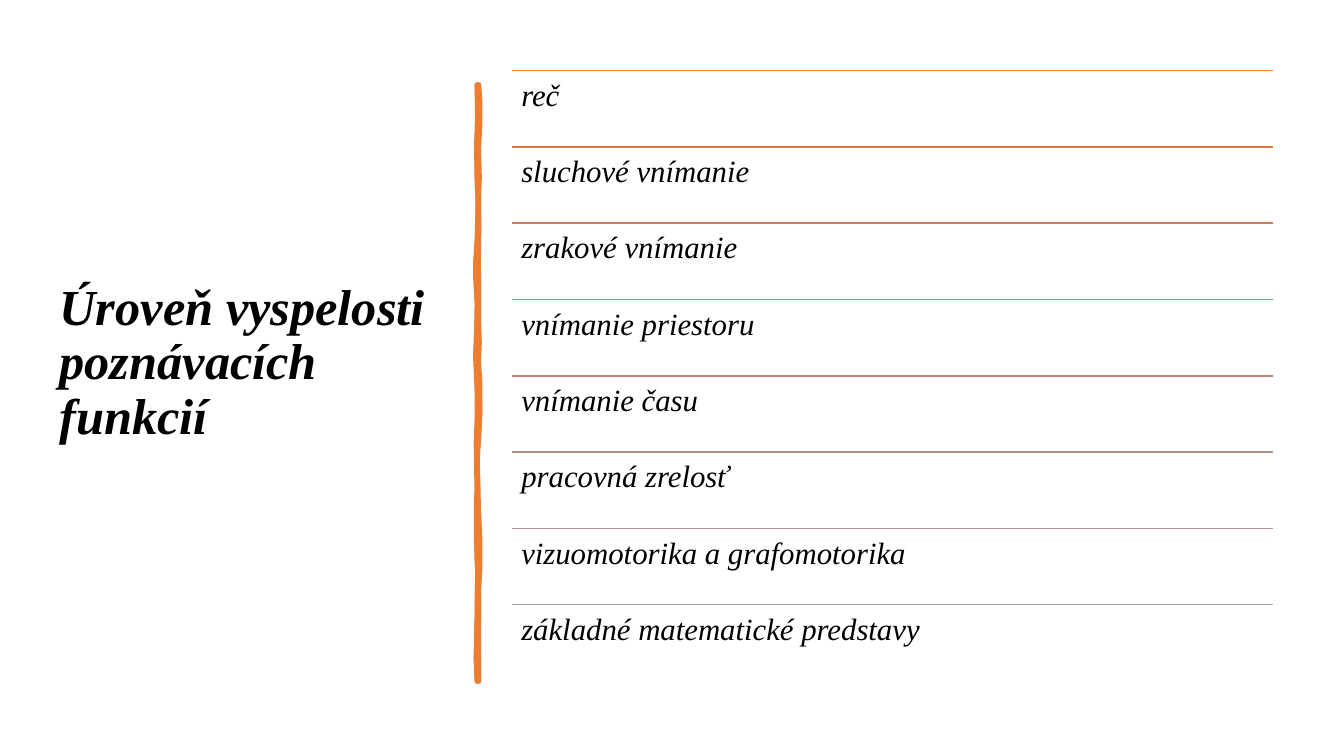
from lxml.etree import SubElement
from pptx import Presentation
from pptx.dml.color import RGBColor
from pptx.enum.shapes import MSO_CONNECTOR
from pptx.enum.text import MSO_ANCHOR, MSO_AUTO_SIZE, PP_ALIGN
from pptx.oxml.ns import qn
from pptx.util import Inches, Pt

TOPICS = [
    ("reč", "ED7D31"),
    ("sluchové vnímanie", "E07A44"),
    ("zrakové vnímanie", "D57B56"),
    ("vnímanie priestoru", "CA7E67"),
    ("vnímanie času", "BF8478"),
    ("pracovná zrelosť", "B68D88"),
    ("vizuomotorika a grafomotorika", "AD9897"),
    ("základné matematické predstavy", "A5A5A5"),
]
LIST_LEFT, LIST_TOP, LIST_WIDTH, LAST_TOP = 5.08, 0.7, 7.55, 6
ROW_HEIGHT = (LAST_TOP - LIST_TOP) / (len(TOPICS) - 1)

BRUSH_START = (4.75, 0.84)
BRUSH_STROKES = [
    [
        (4.77, 1.02, 4.77, 1.19, 4.75, 1.46), (4.73, 1.73, 4.76, 1.95, 4.75, 2.26),
        (4.74, 2.57, 4.75, 2.62, 4.75, 2.94), (4.74, 3.25, 4.77, 3.42, 4.75, 3.56),
        (4.73, 3.7, 4.79, 4.14, 4.75, 4.36), (4.71, 4.57, 4.72, 4.84, 4.75, 5.1),
        (4.77, 5.36, 4.77, 5.64, 4.75, 5.84), (4.73, 6.03, 4.76, 6.5, 4.75, 6.76),
        (4.74, 6.76, 4.73, 6.76, 4.73, 6.76), (4.74, 6.46, 4.71, 6.44, 4.73, 6.13),
        (4.74, 5.83, 4.74, 5.7, 4.73, 5.57), (4.72, 5.44, 4.72, 4.95, 4.73, 4.77),
        (4.73, 4.59, 4.71, 4.45, 4.73, 4.15), (4.74, 3.86, 4.72, 3.73, 4.73, 3.35),
        (4.74, 2.98, 4.72, 2.81, 4.73, 2.5), (4.74, 2.18, 4.75, 2, 4.73, 1.81),
        (4.7, 1.63, 4.77, 1.04, 4.73, 0.84),
    ],
    [
        (4.75, 1.15, 4.72, 1.25, 4.75, 1.52), (4.77, 1.79, 4.74, 1.97, 4.75, 2.08),
        (4.76, 2.2, 4.74, 2.55, 4.75, 2.94), (4.76, 3.33, 4.73, 3.43, 4.75, 3.62),
        (4.77, 3.81, 4.77, 3.97, 4.75, 4.3), (4.72, 4.63, 4.75, 4.74, 4.75, 5.16),
        (4.75, 5.57, 4.74, 5.53, 4.75, 5.78), (4.76, 6.03, 4.74, 6.47, 4.75, 6.76),
        (4.74, 6.75, 4.73, 6.75, 4.73, 6.76), (4.7, 6.49, 4.74, 6.32, 4.73, 6.13),
        (4.72, 5.95, 4.75, 5.69, 4.73, 5.39), (4.71, 5.1, 4.76, 5, 4.73, 4.71),
        (4.7, 4.42, 4.77, 4.2, 4.73, 3.86), (4.69, 3.51, 4.74, 3.25, 4.73, 3),
        (4.71, 2.75, 4.71, 2.59, 4.73, 2.38), (4.74, 2.16, 4.74, 1.85, 4.73, 1.64),
        (4.71, 1.43, 4.75, 1.21, 4.73, 0.84),
    ],
]


def color(hex_value):
    return RGBColor.from_string(hex_value)


def apply(target, formats):
    for name, value in formats.items():
        setattr(target, name, value)


def write(frame, text, size, bold, frame_formats):
    apply(frame, {"word_wrap": True, "auto_size": MSO_AUTO_SIZE.NONE, **frame_formats})
    paragraph = frame.paragraphs[0]
    apply(paragraph, {"alignment": PP_ALIGN.LEFT, "line_spacing": 0.9})
    run = paragraph.add_run()
    run.text = text
    apply(run.font, {"name": "Times New Roman", "size": Pt(size), "bold": bold, "italic": True})
    run.font.color.rgb = color("000000")


def add_heading(slide, text):
    heading = slide.shapes.title
    apply(heading, {"left": Inches(0.49), "top": Inches(0.33),
                    "width": Inches(3.9), "height": Inches(6.55)})
    write(heading.text_frame, text, 36, True, {"vertical_anchor": MSO_ANCHOR.MIDDLE})


def curve_points(start, curves, steps=3):
    points = [start]
    for x1, y1, x2, y2, x3, y3 in curves:
        x0, y0 = points[-1]
        for step in range(1, steps + 1):
            t = step / steps
            u = 1 - t
            weights = (u ** 3, 3 * u * u * t, 3 * u * t * t, t ** 3)
            points.append((sum(w * x for w, x in zip(weights, (x0, x1, x2, x3))),
                           sum(w * y for w, y in zip(weights, (y0, y1, y2, y3)))))
    return points


def add_brush_line(slide, accent):
    outlines = [[(Inches(x), Inches(y)) for x, y in curve_points(BRUSH_START, curves)]
                for curves in BRUSH_STROKES]
    builder = slide.shapes.build_freeform(*outlines[0][0])
    builder.add_line_segments(outlines[0][1:], close=True)
    for outline in outlines[1:]:
        builder.move_to(*outline[0])
        builder.add_line_segments(outline[1:], close=True)
    brush = builder.convert_to_shape()
    brush.shadow.inherit = False
    brush.fill.solid()
    brush.fill.fore_color.rgb = color(accent)
    brush.line.color.rgb = color(accent)
    brush.line.width = Pt(3.25)
    SubElement(brush._element.spPr.find(qn("a:ln")), qn("a:round"))


def add_rule(slide, top, accent):
    rule = slide.shapes.add_connector(
        MSO_CONNECTOR.STRAIGHT, Inches(LIST_LEFT), Inches(top),
        Inches(LIST_LEFT + LIST_WIDTH), Inches(top))
    rule.line.color.rgb = color(accent)
    rule.line.width = Pt(1)
    SubElement(rule._element.spPr, qn("a:effectLst"))


def add_topic(slide, top, text):
    topic = slide.shapes.add_textbox(
        Inches(LIST_LEFT), Inches(top), Inches(LIST_WIDTH), Inches(ROW_HEIGHT))
    margins = {f"margin_{side}": Inches(0.09) for side in ("left", "top", "right", "bottom")}
    write(topic.text_frame, text, 22, False, {"vertical_anchor": MSO_ANCHOR.TOP, **margins})


def main():
    presentation = Presentation()
    apply(presentation, {"slide_width": Inches(13.33), "slide_height": Inches(7.5)})
    slide = presentation.slides.add_slide(presentation.slide_layouts.get_by_name("Title Only"))
    add_heading(slide, "Úroveň vyspelosti poznávacích funkcií")
    add_brush_line(slide, "ED7D31")
    for row, (text, accent) in enumerate(TOPICS):
        top = LIST_TOP + row * ROW_HEIGHT
        add_rule(slide, top, accent)
        add_topic(slide, top, text)
    presentation.save("out.pptx")


if __name__ == "__main__":
    main()
